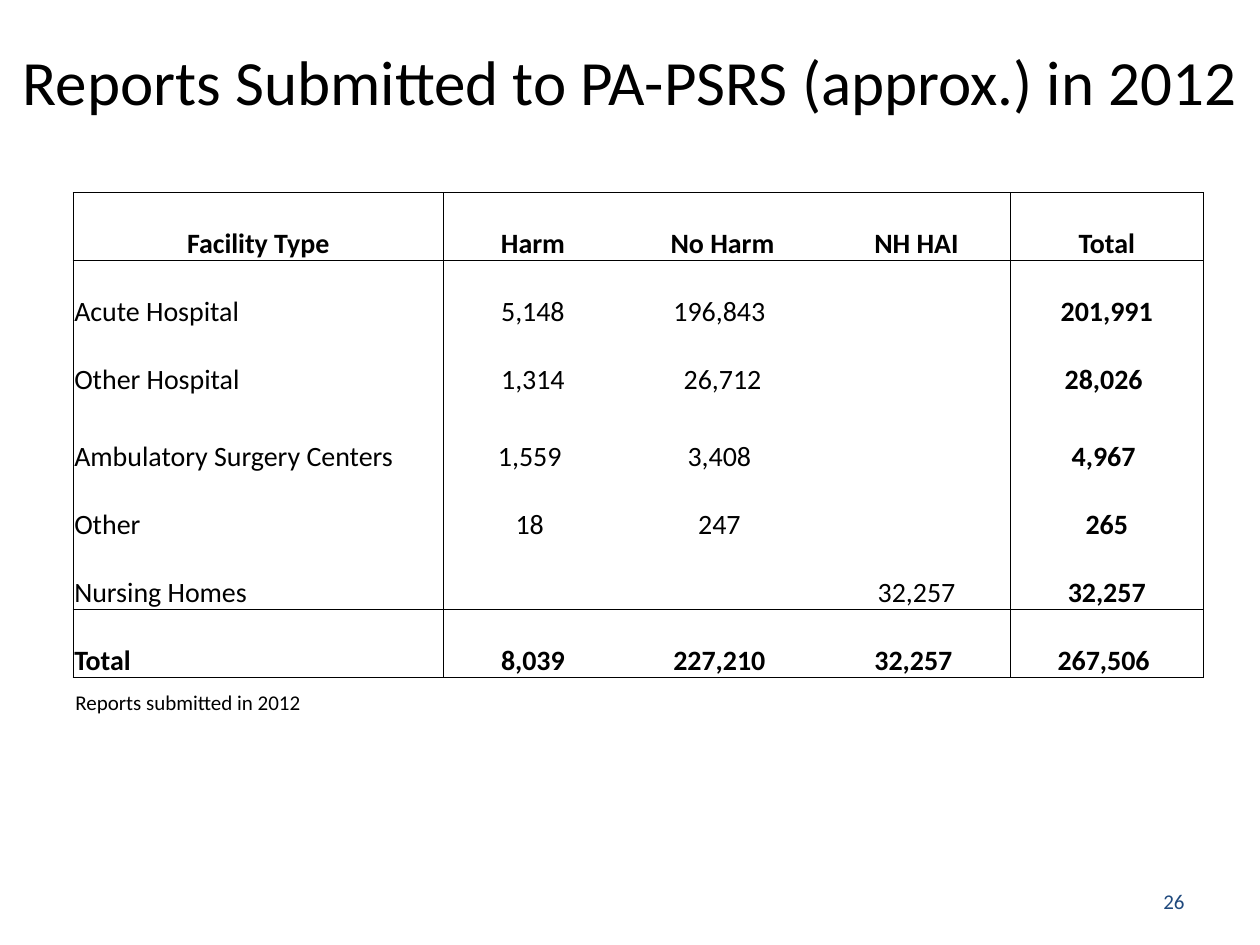
"""Build the slide tabulating reports submitted to PA-PSRS in 2012."""
import pptx
import pptx.dml.color
import pptx.enum.text
import pptx.oxml
import pptx.oxml.ns
import pptx.util

Inches = pptx.util.Inches
Pt = pptx.util.Pt
ALIGN = pptx.enum.text.PP_ALIGN
ANCHOR = pptx.enum.text.MSO_ANCHOR

BLACK = pptx.dml.color.RGBColor(0x00, 0x00, 0x00)
NAVY = pptx.dml.color.RGBColor(0x1F, 0x49, 0x7D)
FONT = "Calibri"

TITLE = "Reports Submitted to PA-PSRS (approx.) in 2012"
FOOTNOTE = "Reports submitted in 2012"
PAGE_NUMBER = "26"
REPORTS = [
    ("Facility Type", "Harm", "No Harm", "NH HAI", "Total"),
    ("Acute Hospital", "5,148", "196,843 ", "", "201,991"),
    ("Other Hospital", "1,314", "26,712", "", "28,026 "),
    ("Ambulatory Surgery Centers", "1,559 ", "3,408 ", "", "4,967 "),
    ("Other", "18 ", "247 ", "", "265"),
    ("Nursing Homes", "", "", "32,257", "32,257"),
    ("Total", "8,039", "227,210 ", "32,257 ", "267,506 "),
]
COLUMN_WIDTHS = [2.94, 1.42, 1.59, 1.49, 1.53]
ROW_HEIGHTS = [0.54, 0.54, 0.54, 0.61, 0.54, 0.54, 0.54]
LAST_ROW = len(REPORTS) - 1
LAST_COLUMN = len(COLUMN_WIDTHS) - 1
RULED_ROW_EDGES = {0, 1, LAST_ROW, LAST_ROW + 1}
RULED_COLUMN_EDGES = {0, 1, LAST_COLUMN, LAST_COLUMN + 1}


def write(frame, text, size, color=BLACK, bold=False, align=ALIGN.LEFT):
    paragraph = frame.paragraphs[0]
    paragraph.text = text
    paragraph.alignment = align
    font = paragraph.font
    font.name, font.size, font.bold = FONT, Pt(size), bold
    font.color.rgb = color


def place(shape, left, top, width, height):
    shape.left, shape.top = Inches(left), Inches(top)
    shape.width, shape.height = Inches(width), Inches(height)


def rule_cell(cell, row, column):
    edges = {
        "L": column in RULED_COLUMN_EDGES,
        "R": column + 1 in RULED_COLUMN_EDGES,
        "T": row in RULED_ROW_EDGES,
        "B": row + 1 in RULED_ROW_EDGES,
    }
    namespace = pptx.oxml.ns.nsdecls("a")
    for side, ruled in edges.items():
        paint = f'<a:solidFill><a:srgbClr val="{BLACK}"/></a:solidFill>' if ruled else "<a:noFill/>"
        cell._tc.get_or_add_tcPr().append(pptx.oxml.parse_xml(
            f'<a:ln{side} {namespace} w="{Pt(0.5)}">{paint}</a:ln{side}>'))


def add_reports(slide):
    table = slide.shapes.add_table(
        len(REPORTS), len(COLUMN_WIDTHS), Inches(0.58), Inches(1.53),
        Inches(sum(COLUMN_WIDTHS)), Inches(sum(ROW_HEIGHTS))).table
    table.first_row = table.horz_banding = False
    for column, width in zip(table.columns, COLUMN_WIDTHS):
        column.width = Inches(width)
    for row, (values, height) in enumerate(zip(REPORTS, ROW_HEIGHTS)):
        table.rows[row].height = Inches(height)
        for column, value in enumerate(values):
            cell = table.cell(row, column)
            cell.margin_left = cell.margin_right = cell.margin_top = Inches(0.01)
            cell.margin_bottom = 0
            cell.vertical_anchor = ANCHOR.BOTTOM
            rule_cell(cell, row, column)
            cell.fill.background()
            write(cell.text_frame, value, 16,
                  bold=row in (0, LAST_ROW) or column == LAST_COLUMN,
                  align=ALIGN.LEFT if column == 0 and row else ALIGN.CENTER)


def add_label(slide, box, text, color, align, anchor):
    frame = slide.shapes.add_textbox(*map(Inches, box)).text_frame
    frame.word_wrap = True
    frame.vertical_anchor = anchor
    write(frame, text, 12, color, align=align)


def main():
    deck = pptx.Presentation()
    deck.slide_width, deck.slide_height = Inches(10), Inches(7.5)
    slide = deck.slides.add_slide(deck.slide_layouts[5])
    title = slide.shapes.title
    place(title, 0, 0.16, 10, 0.96)
    title.text_frame.vertical_anchor = ANCHOR.MIDDLE
    write(title.text_frame, TITLE, 36, align=ALIGN.CENTER)
    add_reports(slide)
    add_label(slide, (0.5, 5.42, 3.17, 0.3), FOOTNOTE, BLACK, ALIGN.LEFT, ANCHOR.TOP)
    add_label(slide, (7.17, 6.95, 2.33, 0.4), PAGE_NUMBER, NAVY, ALIGN.RIGHT, ANCHOR.MIDDLE)
    deck.save("out.pptx")


if __name__ == "__main__":
    main()
